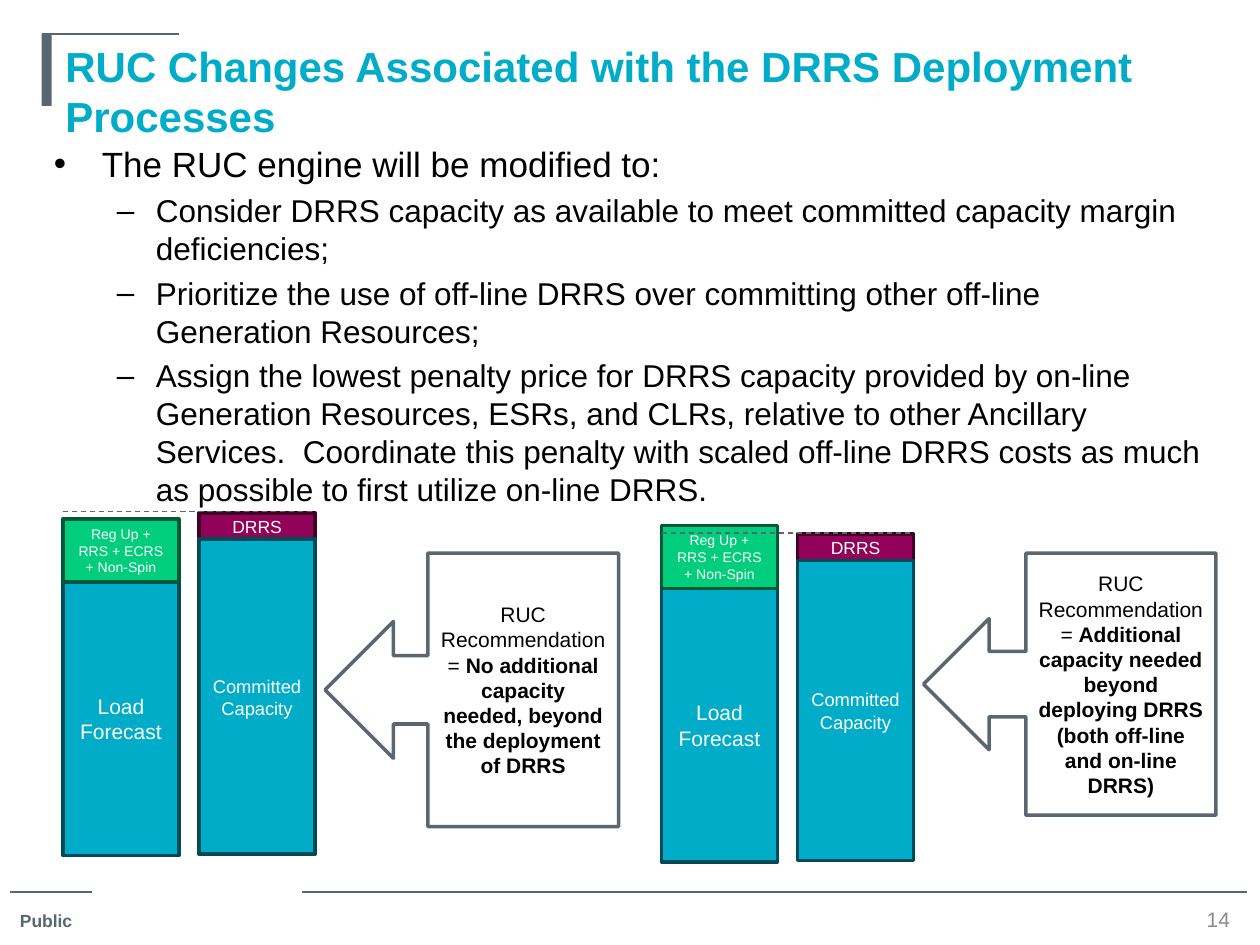
from lxml.etree import SubElement
from pptx import Presentation
from pptx.dml.color import RGBColor
from pptx.enum.dml import MSO_LINE
from pptx.enum.shapes import MSO_CONNECTOR, MSO_SHAPE
from pptx.enum.text import MSO_ANCHOR, PP_ALIGN
from pptx.oxml.ns import qn
from pptx.util import Inches, Pt

# Content
TITLE = "RUC Changes Associated with the DRRS Deployment Processes"
BULLETS = [
    (0, "The RUC engine will be modified to:"),
    (1, "Consider DRRS capacity as available to meet committed capacity margin deficiencies;"),
    (1, "Prioritize the use of off-line DRRS over committing other off-line Generation Resources;"),
    (1, "Assign the lowest penalty price for DRRS capacity provided by on-line Generation Resources, "
        "ESRs, and CLRs, relative to other Ancillary Services.  Coordinate this penalty with scaled "
        "off-line DRRS costs as much as possible to first utilize on-line DRRS."),
]
# Bullet levels: character, left margin, hanging indent, size
LEVELS = [("•", 0.38, 0.38, 20), ("–", 0.81, 0.31, 18)]
SCENARIOS = [
    dict(left=0.5, load_top=4.12, drrs_top=4.07, capacity_height=2.5, callout=(2.33, 2.17),
         result="No additional capacity needed, beyond the deployment of DRRS"),
    dict(left=5.25, load_top=4.17, drrs_top=4.24, capacity_height=2.38, callout=(2.32, 2.08),
         result="Additional capacity needed beyond deploying DRRS (both off-line and on-line DRRS)"),
]

# Colours as (fill, line)
TEAL, GREEN, MAROON = ("00ACC8", "004B58"), ("00CE7D", "005A37"), ("910258", "400127")
GRAY, WHITE, BLACK = "5B6770", "FFFFFF", "000000"

# Chart geometry
BAR_WIDTH, BAR_STEP, CALLOUT_OFFSET = 0.92, 1.08, 2.08
RESERVE_HEIGHT, LOAD_HEIGHT, DRRS_HEIGHT, CALLOUT_TOP = 0.5, 2.17, 0.21, 4.39


def rgb(value):
    return RGBColor.from_string(value)


def add_run(p, text, size, color, bold=False):
    r = p.add_run()
    r.text = text
    for name, value in dict(name="Arial", size=Pt(size), bold=bold).items():
        setattr(r.font, name, value)
    r.font.color.rgb = rgb(color)


def text_box(s, box, align=PP_ALIGN.LEFT, anchor=MSO_ANCHOR.TOP):
    tf = s.shapes.add_textbox(*map(Inches, box)).text_frame
    tf.word_wrap, tf.vertical_anchor = True, anchor
    tf.paragraphs[0].alignment = align
    return tf


def add_block(s, kind, box, colors, runs=()):
    sp = s.shapes.add_shape(kind, *map(Inches, box))
    sp.shadow.inherit = False
    fill, line = colors
    sp.fill.solid()
    sp.fill.fore_color.rgb = rgb(fill)
    if line:
        sp.line.color.rgb, sp.line.width = rgb(line), Pt(2)
    else:
        sp.line.fill.background()
    tf = sp.text_frame
    tf.word_wrap, tf.vertical_anchor = True, MSO_ANCHOR.MIDDLE
    p = tf.paragraphs[0]
    p.alignment = PP_ALIGN.CENTER
    for run in runs:
        add_run(p, *run)


def add_rule(s, x1, x2, y, dashed=False):
    line = s.shapes.add_connector(MSO_CONNECTOR.STRAIGHT, *map(Inches, (x1, y, x2, y)))
    line.line.color.rgb, line.line.width = rgb(GRAY), Pt(0.75)
    if dashed:
        line.line.dash_style = MSO_LINE.DASH
    SubElement(line._element.spPr, qn("a:effectLst"))


def add_bullet(p, level):
    char, margin, hanging, _ = LEVELS[level]
    p.level = level
    pPr = p._p.get_or_add_pPr()
    pPr.set("marL", str(Inches(margin)))
    pPr.set("indent", str(-Inches(hanging)))
    SubElement(pPr, qn("a:buFont")).set("typeface", "Arial")
    SubElement(pPr, qn("a:buChar")).set("char", char)


def add_scenario(s, left, load_top, drrs_top, capacity_height, callout, result):
    right = left + BAR_STEP
    bars = [
        (left, load_top + RESERVE_HEIGHT, LOAD_HEIGHT, TEAL, "Load Forecast", 12),
        (left, load_top, RESERVE_HEIGHT, GREEN, "Reg Up + RRS + ECRS + Non-Spin", 8),
        (right, drrs_top, DRRS_HEIGHT, MAROON, "DRRS", 10),
        (right, drrs_top + DRRS_HEIGHT, capacity_height, TEAL, "Committed Capacity", 10.5),
    ]
    for x, y, height, colors, label, size in bars:
        add_block(s, MSO_SHAPE.RECTANGLE, (x, y, BAR_WIDTH, height), colors,
                  [(label, size, WHITE)])
    # Level of total committed capacity
    add_rule(s, left, right + BAR_WIDTH, drrs_top - 0.01, dashed=True)
    add_block(s, MSO_SHAPE.LEFT_ARROW_CALLOUT, (left + CALLOUT_OFFSET, CALLOUT_TOP, *callout),
              (WHITE, GRAY),
              [("RUC Recommendation = ", 12, BLACK), (result, 12, BLACK, True)])


def main():
    prs = Presentation()
    prs.slide_width, prs.slide_height = Inches(10), Inches(7.5)
    s = prs.slides.add_slide(prs.slide_layouts[6])

    # Footer and title decoration
    for x1, x2, y in [(0.08, 0.73, 7.08), (2.4, 9.9, 7.08), (0.33, 1.42, 0.27)]:
        add_rule(s, x1, x2, y)
    add_block(s, MSO_SHAPE.RECTANGLE, (0.33, 0.27, 0.08, 0.57), (GRAY, None))
    add_run(text_box(s, (0.06, 7.17, 0.77, 0.28)).paragraphs[0], "Public", 10, GRAY, True)
    number = text_box(s, (9.42, 7.18, 0.5, 0.23), PP_ALIGN.CENTER, MSO_ANCHOR.MIDDLE)
    add_run(number.paragraphs[0], "14", 12, "8C8C8C")

    # Title and bullets
    add_run(text_box(s, (0.42, 0.27, 9.25, 1.25)).paragraphs[0], TITLE, 24, TEAL[0], True)
    tf = text_box(s, (0.33, 1.08, 9.33, 4.72))
    for i, (level, text) in enumerate(BULLETS):
        p = tf.add_paragraph() if i else tf.paragraphs[0]
        if i:
            p.space_before = Pt(4)
        add_bullet(p, level)
        add_run(p, text, LEVELS[level][3], BLACK)

    # Capacity comparisons
    for scenario in SCENARIOS:
        add_scenario(s, **scenario)

    prs.save("out.pptx")


if __name__ == "__main__":
    main()
